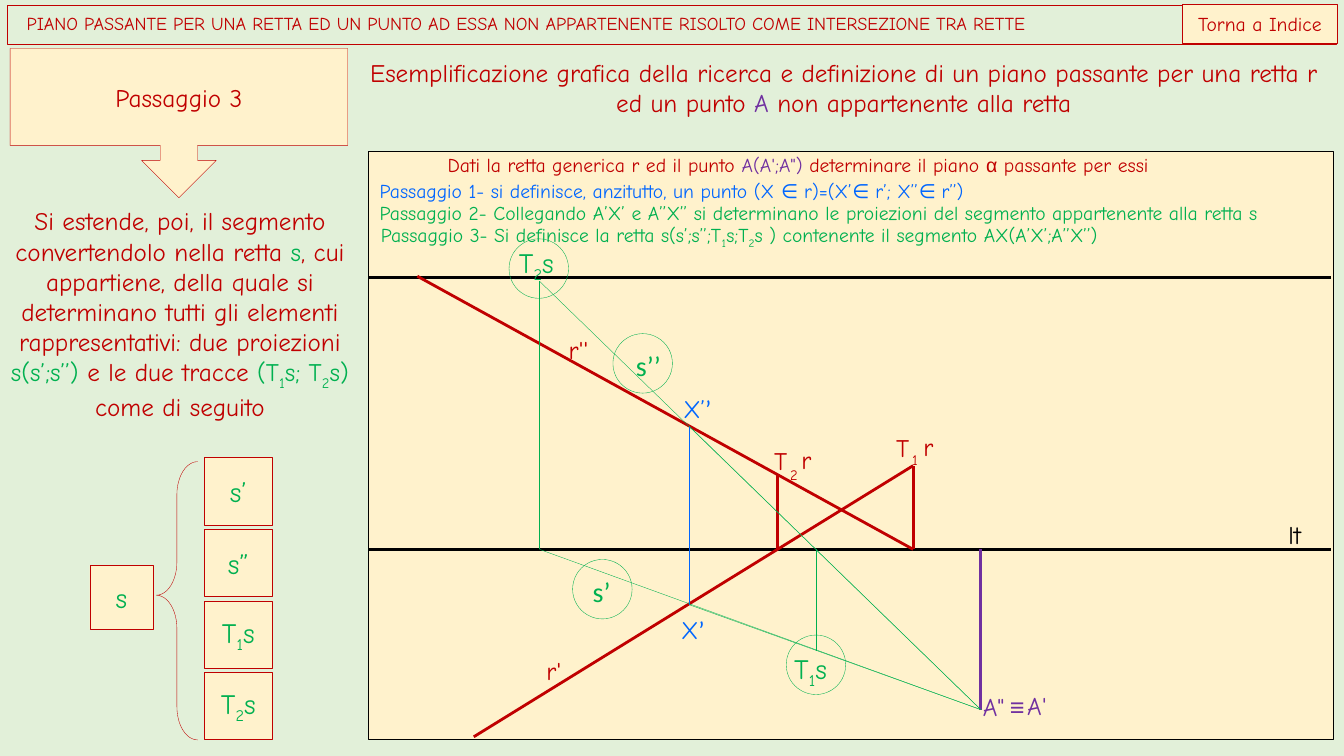
from lxml.etree import SubElement
from pptx import Presentation
from pptx.dml.color import RGBColor
from pptx.enum.shapes import MSO_CONNECTOR, MSO_SHAPE
from pptx.enum.text import MSO_ANCHOR, MSO_AUTO_SIZE, PP_ALIGN
from pptx.oxml.ns import qn
from pptx.util import Pt

MINT = RGBColor(0xE2, 0xF0, 0xD9)
CREAM = RGBColor(0xFF, 0xF2, 0xCC)
RED = RGBColor(0xC0, 0x00, 0x00)
GREEN = RGBColor(0x00, 0xB0, 0x50)
BLUE = RGBColor(0x00, 0x66, 0xFF)
PURPLE = RGBColor(0x70, 0x30, 0xA0)
BLACK = RGBColor(0, 0, 0)
HAND, ARIAL, CALIBRI = "Comic Neue", "Arial", "Calibri"
THIN, HAIRLINE = 0.25, 0

# Runs are (text, colour) or (text, colour, font); "_" lowers the next character.
TITLE = [("PIANO PASSANTE PER UNA RETTA ED UN PUNTO AD ESSA NON APPARTENENTE "
          "RISOLTO COME INTERSEZIONE TRA RETTE", RED)]
INDEX = [("Torna a Indice", RED)]
STEP = [("Passaggio 3", RED)]
HEADING = [("Esemplificazione grafica della ricerca e definizione di un piano "
            "passante per una retta r ed un punto ", RED),
           ("A", PURPLE), (" non appartenente alla retta", RED)]
EXPLANATION = [("Si estende, poi, il segmento convertendolo nella retta ", RED),
               ("s", GREEN),
               (", cui appartiene, della quale si determinano tutti gli elementi "
                "rappresentativi: due proiezioni ", RED),
               ("s(s’;s’’) ", GREEN), ("e le due tracce ", RED),
               ("(T_1s; T_2s) ", GREEN), ("come di seguito", RED)]
PARTS_OF_S = ["s’", "s”", "T_1s", "T_2s"]
PROBLEM = [("Dati la retta generica r ed il punto ", RED), ("A(A';A\") ", PURPLE),
           ("determinare il piano ", RED), ("α", RED, ARIAL),
           (" passante per essi", RED)]

# Plain labels: runs, size, left, top, width, height
NOTES = [
    ([("Passaggio 1- si definisce, anzitutto, un punto "
       "(X ∈ r)=(X’∈ r’; X’’∈ r’’)", BLUE)], 14, 264.2, 124.6, 493.9, 24.5),
    ([("Passaggio 2- Collegando A’X’ e A’’X’’ si determinano le proiezioni "
       "del segmento appartenente alla retta s", GREEN)], 14, 264.2, 139.7, 688.3, 24.5),
    ([("Passaggio 3- Si definisce la retta s(s’;s’’;T_1s;T_2s ) contenente "
       "il segmento AX(A’X’;A’’X’’)", GREEN)], 14, 265, 155.5, 693.4, 24.5),
    ([("X", BLUE), ("’", BLUE, CALIBRI)], 18, 479.5, 435.6, 38.9, 28.8),
    ([("X’", BLUE), ("’", BLUE, CALIBRI)], 18, 481, 277.2, 38.9, 28.8),
    ([("s’", GREEN, CALIBRI)], 20, 416.2, 406.8, 34.6, 31.7),
    ([("s’’", GREEN, CALIBRI)], 20, 447.1, 245.5, 34.6, 31.7),
    ([("T_2s", GREEN)], 20, 363.6, 172.1, 48.2, 31.7),
    ([("T_1s", GREEN)], 20, 560.2, 461.5, 45.4, 31.7),
]

# Tight labels on cream: text, colour, font, left, top, width, height
TAGS = [
    ("T", RED, HAND, 553, 318.2, 12.2, 21.6),
    ("_2", RED, HAND, 564.5, 320.4, 7.2, 14.4),
    ("r", RED, HAND, 572.4, 317.5, 8.6, 21.6),
    ("r'", RED, HAND, 390.2, 468, 15.8, 21.6),
    ("r''", RED, HAND, 406.1, 239, 23, 21.6),
    ("A'", PURPLE, HAND, 733.7, 493.2, 20.2, 21.6),
    ("A\"", PURPLE, HAND, 702, 493.9, 20.9, 21.6),
    ("≡", PURPLE, ARIAL, 721.4, 493.9, 10.1, 21.6),
    ("T", RED, HAND, 640.1, 308.9, 12.2, 13.7),
    ("_1", RED, HAND, 651.6, 310.3, 5.8, 9.4),
    ("r", RED, HAND, 659.5, 308.2, 5.8, 13.7),
    ("lt", BLACK, HAND, 920.2, 370.8, 20.9, 17.3),
]

# Construction: the ground line and the points that the lines join
GROUND, TOP_EDGE = 392.4, 198
PANEL_LEFT, PANEL_RIGHT = 263.3, 951.1
POINT_A, X_FIRST, X_SECOND = (700.6, 506.9), (492.5, 432), (492.5, 304.6)
T1_R, T2_R = (652.3, 332.6), (555.1, 339.1)
T1_S, T2_S = (583.2, 465.1), (385.4, 200.9)


def foot(point):
    """Point of the ground line on the same vertical."""
    return point[0], GROUND


LINES = [
    ((PANEL_LEFT, GROUND), (PANEL_RIGHT, GROUND), BLACK, HAIRLINE),
    ((PANEL_LEFT, TOP_EDGE), (PANEL_RIGHT, TOP_EDGE), BLACK, HAIRLINE),
    ((298.1, 197.3), foot(T1_R), RED, HAIRLINE),
    ((338.4, 526.3), T1_R, RED, HAIRLINE),
    (foot(T2_R), T2_R, RED, HAIRLINE),
    (foot(T1_R), T1_R, RED, HAIRLINE),
    (POINT_A, foot(POINT_A), PURPLE, HAIRLINE),
    (X_SECOND, X_FIRST, BLUE, THIN),
    (POINT_A, X_FIRST, GREEN, THIN),
    (POINT_A, X_SECOND, GREEN, THIN),
    (POINT_A, foot(T2_S), GREEN, THIN),
    (POINT_A, T2_S, GREEN, THIN),
    (foot(T2_S), T2_S, GREEN, THIN),
    (foot(T1_S), T1_S, GREEN, THIN),
]
CIRCLE = 42.5
CIRCLE_CORNERS = [(561.6, 453.6), (363.6, 170.6), (437.8, 238.3), (409, 399.6)]

presentation = Presentation()
presentation.slide_width, presentation.slide_height = Pt(960), Pt(540)
slide = presentation.slides.add_slide(presentation.slide_layouts[6])
slide.background.fill.solid()
slide.background.fill.fore_color.rgb = MINT


def write(shape, runs, size, align=PP_ALIGN.LEFT, space_after=0, **frame_format):
    frame = shape.text_frame
    for name, value in {"word_wrap": True, **frame_format}.items():
        setattr(frame, name, value)
    paragraph = frame.paragraphs[0]
    paragraph.alignment = align
    paragraph.space_after = Pt(space_after)
    for text, colour, *font_name in runs:
        for index, piece in enumerate(text.split("_")):
            pieces = [(piece[:1], True), (piece[1:], False)] if index else [(piece, False)]
            for content, lowered in pieces:
                if not content:
                    continue
                run = paragraph.add_run()
                run.text = content
                run.font.size = Pt(size)
                run.font.name = font_name[0] if font_name else HAND
                run.font.color.rgb = colour
                if lowered:
                    run.font._element.set("baseline", "-25000")
    return paragraph


def add_figure(kind, box, fill=None, line=None, width=THIN):
    shape = slide.shapes.add_shape(kind, *map(Pt, box))
    shape.shadow.inherit = False
    if fill is None:
        shape.fill.background()
    else:
        shape.fill.solid()
        shape.fill.fore_color.rgb = fill
    if line is None:
        shape.line.fill.background()
    else:
        shape.line.color.rgb = line
        shape.line.width = Pt(width)
    return shape


def add_note(runs, size, *box, **text_format):
    text_box = slide.shapes.add_textbox(*map(Pt, box))
    write(text_box, runs, size, auto_size=MSO_AUTO_SIZE.SHAPE_TO_FIT_TEXT, **text_format)


def add_line(start, end, colour, width):
    connector = slide.shapes.add_connector(MSO_CONNECTOR.STRAIGHT, *map(Pt, start + end))
    connector.line.color.rgb = colour
    connector.line.width = Pt(width)
    SubElement(connector._element.spPr, qn("a:effectLst"))


CENTRED = {"align": PP_ALIGN.CENTER, "vertical_anchor": MSO_ANCHOR.MIDDLE}
NO_MARGINS = dict.fromkeys(
    ("margin_left", "margin_top", "margin_right", "margin_bottom"), 0)

# Left column
callout = add_figure(MSO_SHAPE.DOWN_ARROW_CALLOUT, (7.2, 34.6, 241.2, 106.6), CREAM, RED)
write(callout, STEP, 18, **CENTRED)
add_note(HEADING, 18, 248.4, 37.4, 708.5, 51.1, align=PP_ALIGN.CENTER)
add_note(EXPLANATION, 18, 0, 143.3, 257, 181.4, align=PP_ALIGN.CENTER)
whole = add_figure(MSO_SHAPE.RECTANGLE, (64.1, 403.9, 45.4, 45.4), CREAM, RED)
write(whole, [("s", GREEN)], 20, space_after=10, **CENTRED)
for row, part in enumerate(PARTS_OF_S):
    part_box = add_figure(MSO_SHAPE.RECTANGLE,
                          (146.2, 326.9 + 51.1 * row, 48.2, 48.2), CREAM, RED)
    write(part_box, [(part, GREEN)], 20, space_after=10, **CENTRED)
brace = add_figure(MSO_SHAPE.LEFT_BRACE, (111.6, 329.8, 29.5, 198.7), line=RED)
brace.adjustments[0], brace.adjustments[1] = 0.8, 0.48

# Drawing panel
add_figure(MSO_SHAPE.RECTANGLE, (263.5, 108, 689, 420.5), CREAM, BLACK, HAIRLINE)
for text, colour, font_name, *box in TAGS:
    tag = add_figure(MSO_SHAPE.RECTANGLE, box, CREAM)
    write(tag, [(text, colour, font_name)], 18, word_wrap=False,
          vertical_anchor=MSO_ANCHOR.TOP,
          auto_size=MSO_AUTO_SIZE.SHAPE_TO_FIT_TEXT, **NO_MARGINS)
add_note(PROBLEM, 14, 319.7, 109.4, 562.3, 17.3, **NO_MARGINS)
for line in LINES:
    add_line(*line)
for note in NOTES:
    add_note(*note)
for corner in CIRCLE_CORNERS:
    add_figure(MSO_SHAPE.OVAL, (*corner, CIRCLE, CIRCLE), line=GREEN)

# Title bar
title_bar = add_figure(MSO_SHAPE.RECTANGLE, (5, 3.4, 949.7, 28.1), line=RED)
title = write(title_bar, TITLE, 13, vertical_anchor=MSO_ANCHOR.MIDDLE, margin_left=Pt(14))
title.line_spacing = 0.9
index_button = add_figure(MSO_SHAPE.RECTANGLE, (844.6, 3, 110.9, 28.1), CREAM, RED)
write(index_button, INDEX, 14, **CENTRED)

presentation.save("out.pptx")
